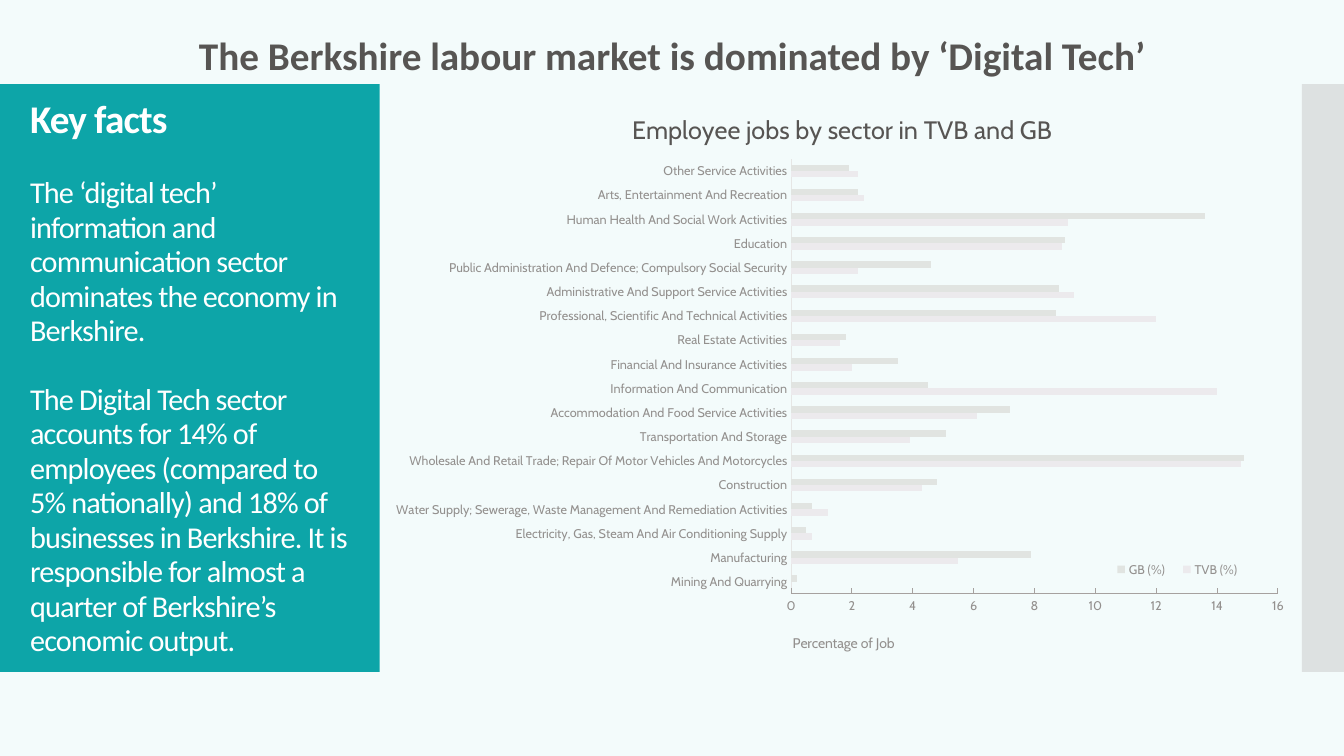
from lxml import etree
from pptx import Presentation
from pptx import util as u
from pptx.chart.data import CategoryChartData
from pptx.dml.color import RGBColor
from pptx.enum import chart as charts, shapes, text
from pptx.oxml import parse_xml
from pptx.oxml.ns import nsdecls, qn

COLUMNS, ROWS = 16, 9
TEAL, INK, MUTED, WHITE = "0DA5A8", "575553", "93908E", "FFFFFF"

# Sector, TVB (%), GB (%), from the bottom of the chart upwards
SECTORS = [
    ("Mining And Quarrying", 0, 0.2),
    ("Manufacturing", 5.5, 7.9),
    ("Electricity, Gas, Steam And Air Conditioning Supply", 0.7, 0.5),
    ("Water Supply; Sewerage, Waste Management And Remediation Activities", 1.2, 0.7),
    ("Construction", 4.3, 4.8),
    ("Wholesale And Retail Trade; Repair Of Motor Vehicles And Motorcycles", 14.8, 14.9),
    ("Transportation And Storage", 3.9, 5.1),
    ("Accommodation And Food Service Activities", 6.1, 7.2),
    ("Information And Communication", 14, 4.5),
    ("Financial And Insurance Activities", 2, 3.5),
    ("Real Estate Activities", 1.6, 1.8),
    ("Professional, Scientific And Technical Activities", 12, 8.7),
    ("Administrative And Support Service Activities", 9.3, 8.8),
    ("Public Administration And Defence; Compulsory Social Security", 2.2, 4.6),
    ("Education", 8.9, 9),
    ("Human Health And Social Work Activities", 9.1, 13.6),
    ("Arts, Entertainment And Recreation", 2.4, 2.2),
    ("Other Service Activities", 2.2, 1.9),
]


def rgb(value):
    return RGBColor.from_string(value)


def set_font(font, size, color, name, bold=False):
    font.size, font.name, font.bold = u.Pt(size), name, bold
    font.color.rgb = rgb(color)


def place(parent, x, y, w=None, h=None, inner=False):
    """Fix a chart part at shares of the chart's size."""
    for old in parent.findall(qn("c:layout")):
        parent.remove(old)
    layout = etree.Element(qn("c:layout"))
    manual = etree.SubElement(layout, qn("c:manualLayout"))
    settings = [("layoutTarget", "inner")] if inner else []
    settings += [("xMode", "edge"), ("yMode", "edge"), ("x", x), ("y", y)]
    settings += [("w", w), ("h", h)] if w else []
    for tag, value in settings:
        etree.SubElement(manual, qn(f"c:{tag}")).set("val", str(value))
    # A layout follows the title's text or the legend's position
    leader = parent.find(qn("c:tx"))
    if leader is None:
        leader = parent.find(qn("c:legendPos"))
    if leader is None:
        parent.insert(0, layout)
    else:
        leader.addnext(layout)


class SlideBuilder:
    heading_font, chart_font = "Calibri", "Cabin"

    def __init__(self, deck):
        self.cell_w = deck.slide_width / COLUMNS
        self.cell_h = deck.slide_height / ROWS
        self.slide = deck.slides.add_slide(deck.slide_layouts[6])

    def box(self, col, row, cols, rows):
        return [u.Emu(round(n)) for n in (col * self.cell_w, row * self.cell_h,
                                          cols * self.cell_w, rows * self.cell_h)]

    def background(self, color):
        fill = self.slide.background.fill
        fill.solid()
        fill.fore_color.rgb = rgb(color)

    def panel(self, area, color, opacity=100):
        panel = self.slide.shapes.add_shape(shapes.MSO_SHAPE.RECTANGLE, *self.box(*area))
        panel.shadow.inherit = False
        panel.fill.solid()
        panel.fill.fore_color.rgb = rgb(color)
        panel.line.fill.background()
        if opacity < 100:
            tint = panel.fill._xPr.find(".//" + qn("a:srgbClr"))
            tint.append(parse_xml(f'<a:alpha {nsdecls("a")} val="{opacity * 1000}"/>'))

    def words(self, area, paragraphs, color, align=None, leading=None, gap=0, spacing=0):
        frame = self.slide.shapes.add_textbox(*self.box(*area)).text_frame
        frame.word_wrap = True
        frame.vertical_anchor = text.MSO_ANCHOR.TOP
        for i, (wording, size, bold) in enumerate(paragraphs):
            para = frame.paragraphs[0] if i == 0 else frame.add_paragraph()
            para.alignment = align
            if leading:
                para.line_spacing = u.Pt(leading)
            if i:
                para.space_before = u.Pt(gap)
            run = para.add_run()
            run.text = wording
            set_font(run.font, size, color, self.heading_font, bold)
            if spacing:
                run.font._element.set("spc", str(round(spacing * 100)))

    def chart_title(self, owner, wording, size, color, x, y):
        title = owner.chart_title if hasattr(owner, "chart_title") else owner.axis_title
        run = title.text_frame.paragraphs[0].add_run()
        run.text = wording
        set_font(run.font, size, color, self.chart_font)
        place(title._element, x, y)

    def axis(self, axis, line_color, tick):
        axis.has_major_gridlines = False
        axis.major_tick_mark = tick
        axis.minor_tick_mark = charts.XL_TICK_MARK.NONE
        axis.format.line.color.rgb = rgb(line_color)
        axis.format.line.width = u.Pt(0.75)
        set_font(axis.tick_labels.font, 9, MUTED, self.chart_font)

    def bar_chart(self, area, title, axis_title, rows, series):
        data = CategoryChartData(number_format="General")
        data.categories = [row[0] for row in rows]
        for i, (name, _) in enumerate(series, 1):
            data.add_series(name, [row[i] for row in rows])
        chart = self.slide.shapes.add_chart(
            charts.XL_CHART_TYPE.BAR_CLUSTERED, *self.box(*area), data).chart
        set_font(chart.font, 10, INK, self.chart_font)

        # Bars
        plot = chart.plots[0]
        plot.gap_width, plot.overlap, plot.vary_by_categories = 182, 0, False
        for bars, (_, color) in zip(plot.series, series):
            bars.format.fill.solid()
            bars.format.fill.fore_color.rgb = rgb(color)
        place(chart._chartSpace.chart.plotArea, 0.447, 0.127, 0.527, 0.745, inner=True)

        # Axes and titles
        self.axis(chart.category_axis, "E6E6E5", charts.XL_TICK_MARK.NONE)
        values = chart.value_axis
        self.axis(values, "A6A19F", charts.XL_TICK_MARK.INSIDE)
        values.minimum_scale, values.maximum_scale, values.major_unit = 0, 16, 2
        self.chart_title(chart, title, 18, INK, 0.27, 0.04)
        self.chart_title(values, axis_title, 10, MUTED, 0.446, 0.935)

        # Legend
        chart.has_legend = True
        legend = chart.legend
        legend.position = charts.XL_LEGEND_POSITION.BOTTOM
        legend.include_in_layout = False
        set_font(legend.font, 9, MUTED, self.chart_font)
        place(legend._element, 0.785, 0.805, 0.16, 0.05)


def main():
    deck = Presentation()
    deck.slide_width, deck.slide_height = u.Inches(13.33), u.Inches(7.5)
    page = SlideBuilder(deck)
    page.background("F3FBFB")

    # Side panels
    page.panel((0, 1, 4.52, 7), TEAL)
    page.panel((15.5, 1, 0.5, 7), "C8C8C8", opacity=50)

    # Headline
    page.words((0, 0.31, 16, 0.69),
               [("The Berkshire labour market is dominated by ‘Digital Tech’", 28, True)],
               INK, align=text.PP_ALIGN.CENTER)

    # Key facts
    page.words((0.24, 1.21, 4.1, 6.7), [
        ("Key facts", 28, True),
        ("The ‘digital tech’ information and communication sector dominates "
         "the economy in Berkshire.", 21.6, False),
        ("The Digital Tech sector accounts for 14% of employees (compared to 5% nationally) "
         "and 18% of businesses in Berkshire. It is responsible for almost a quarter of "
         "Berkshire’s economic output.", 21.6, False),
    ], WHITE, leading=24.6, gap=24.6, spacing=-0.6)

    # Jobs by sector
    page.bar_chart((4.5, 1.01, 11, 6.95), "Employee jobs by sector in TVB and GB",
                   "Percentage of Job", SECTORS,
                   [("TVB (%)", "ECEAED"), ("GB (%)", "E1E4E1")])
    deck.save("out.pptx")


if __name__ == "__main__":
    main()
